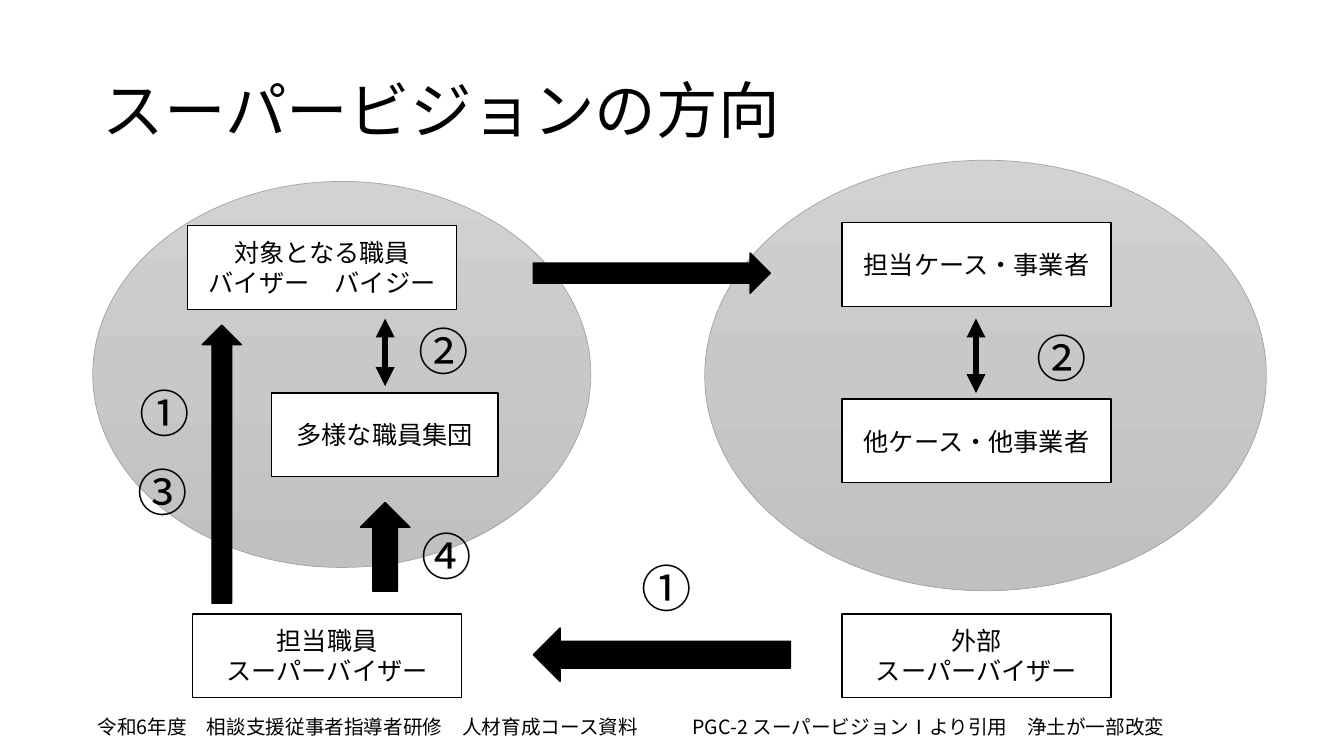
from lxml import etree
from pptx import Presentation, util as u
from pptx.dml.color import RGBColor
from pptx.enum import shapes, text
from pptx.oxml import ns

PX = 9144  # EMU per px, 100 px to the inch
SLIDE = (1333, 750)


class Theme:
    font = "Noto Sans CJK JP"
    ink = RGBColor.from_string("000000")
    paper = RGBColor.from_string("FFFFFF")
    rim = RGBColor.from_string("A5A5A5")
    shades = [(0, "D2D2D2"), (50, "C8C8C8"), (100, "C0C0C0")]
    title, label, number, source = 44, 18, 36, 14
    rule, thin, thick = 1, 0.5, 4.5


TITLE = ("スーパービジョンの方向", (92, 40, 1150, 145))
SOURCE = ("令和6年度　相談支援従事者指導者研修　人材育成コース資料\t"
          "PGC-2 スーパービジョンⅠより引用　浄土が一部改変", (87, 704, 1119, 34))
SOURCE_TAB = 590

GROUPS = [(92, 180, 494, 383), (699, 159, 557, 427)]

BOX_HEIGHT = 83
BOXES = [  # lines, left, top, width
    (["対象となる職員", "バイザー　バイジー"], 186, 224, 267),
    (["多様な職員集団"], 269, 390, 225),
    (["担当職員", "スーパーバイザー"], 191, 609, 267),
    (["担当ケース・事業者"], 835, 221, 267),
    (["他ケース・他事業者"], 835, 396, 267),
    (["外部", "スーパーバイザー"], 835, 609, 267),
]

BLOCK_ARROWS = [  # frame before turning, rotation
    ((529, 251, 235, 40), 0),
    ((529, 623, 255, 53), 180),
    ((82, 441, 276, 39), 270),
    ((338, 518, 88, 49), 270),
]

MUTUAL_ARROWS = [(382, 316, 383), (968, 316, 390)]  # x, top, bottom

NUMBER_SIZE = (86, 71)
NUMBERS = [  # sign, centre x, top
    ("①", 661, 548), ("①", 163, 374), ("③", 161, 453),
    ("④", 443, 516), ("②", 440, 313), ("②", 1053, 320),
]


def emu(lengths):
    return [length * PX for length in lengths]


def add_xml(parent, tag, **attributes):
    return etree.SubElement(parent, ns.qn(tag), attributes)


def write(frame, lines, size, align, anchor, spacing=None, tab=None):
    frame.word_wrap = True
    frame.vertical_anchor = anchor
    for index, line in enumerate(lines):
        para = frame.add_paragraph() if index else frame.paragraphs[0]
        para.text = line
        para.alignment = align
        if spacing:
            para.line_spacing = spacing
        if tab:
            stops = add_xml(para._p.get_or_add_pPr(), "a:tabLst")
            add_xml(stops, "a:tab", pos=str(tab * PX), algn="l")
        para.font.size = u.Pt(size)
        para.font.color.rgb = Theme.ink
        para.font.name = Theme.font
        add_xml(para.font._element, "a:ea", typeface=Theme.font)


def add_text(page, lines, at, size, align=text.PP_ALIGN.LEFT,
             anchor=text.MSO_ANCHOR.TOP, **options):
    box = page.shapes.add_textbox(*emu(at))
    write(box.text_frame, lines, size, align, anchor, **options)


def add_solid(page, kind, at, fill):
    shape = page.shapes.add_shape(kind, *emu(at))
    shape.shadow.inherit = False
    shape.fill.solid()
    shape.fill.fore_color.rgb = fill
    shape.line.color.rgb = Theme.ink
    shape.line.width = u.Pt(Theme.rule)
    return shape


def add_group(page, at):
    """Add a grey ellipse shaded from top to bottom."""
    group = page.shapes.add_shape(shapes.MSO_SHAPE.OVAL, *emu(at))
    group.shadow.inherit = False
    group.line.color.rgb = Theme.rim
    group.line.width = u.Pt(Theme.thin)
    group.fill.gradient()
    group.fill.gradient_angle = 270
    stops = group._element.spPr.find(".//" + ns.qn("a:gsLst"))
    for stop in list(stops):
        stops.remove(stop)
    for percent, color in Theme.shades:
        stop = add_xml(stops, "a:gs", pos=str(percent * 1000))
        add_xml(stop, "a:srgbClr", val=color)


def add_mutual_arrow(page, x, top, bottom):
    arrow = page.shapes.add_connector(
        shapes.MSO_CONNECTOR.STRAIGHT, *emu((x, top, x, bottom)))
    arrow.line.color.rgb = Theme.ink
    arrow.line.width = u.Pt(Theme.thick)
    for end in ("a:headEnd", "a:tailEnd"):
        add_xml(arrow.line._get_or_add_ln(), end, type="triangle")
    add_xml(arrow._element.spPr, "a:effectLst")


def main():
    deck = Presentation()
    deck.slide_width, deck.slide_height = emu(SLIDE)
    page = deck.slides.add_slide(deck.slide_layouts[6])
    center, middle = text.PP_ALIGN.CENTER, text.MSO_ANCHOR.MIDDLE

    title, at = TITLE
    add_text(page, [title], at, Theme.title, anchor=middle, spacing=0.9)
    for at in GROUPS:
        add_group(page, at)
    for lines, left, top, width in BOXES:
        box = add_solid(page, shapes.MSO_SHAPE.RECTANGLE,
                        (left, top, width, BOX_HEIGHT), Theme.paper)
        write(box.text_frame, lines, Theme.label, center, middle)
    for at, rotation in BLOCK_ARROWS:
        arrow = add_solid(page, shapes.MSO_SHAPE.RIGHT_ARROW, at, Theme.ink)
        arrow.rotation = rotation
    for x, top, bottom in MUTUAL_ARROWS:
        add_mutual_arrow(page, x, top, bottom)
    width, height = NUMBER_SIZE
    for sign, x, top in NUMBERS:
        add_text(page, [sign], (x - width // 2, top, width, height),
                 Theme.number, center)
    source, at = SOURCE
    add_text(page, [source], at, Theme.source, tab=SOURCE_TAB)
    deck.save("out.pptx")


if __name__ == "__main__":
    main()
